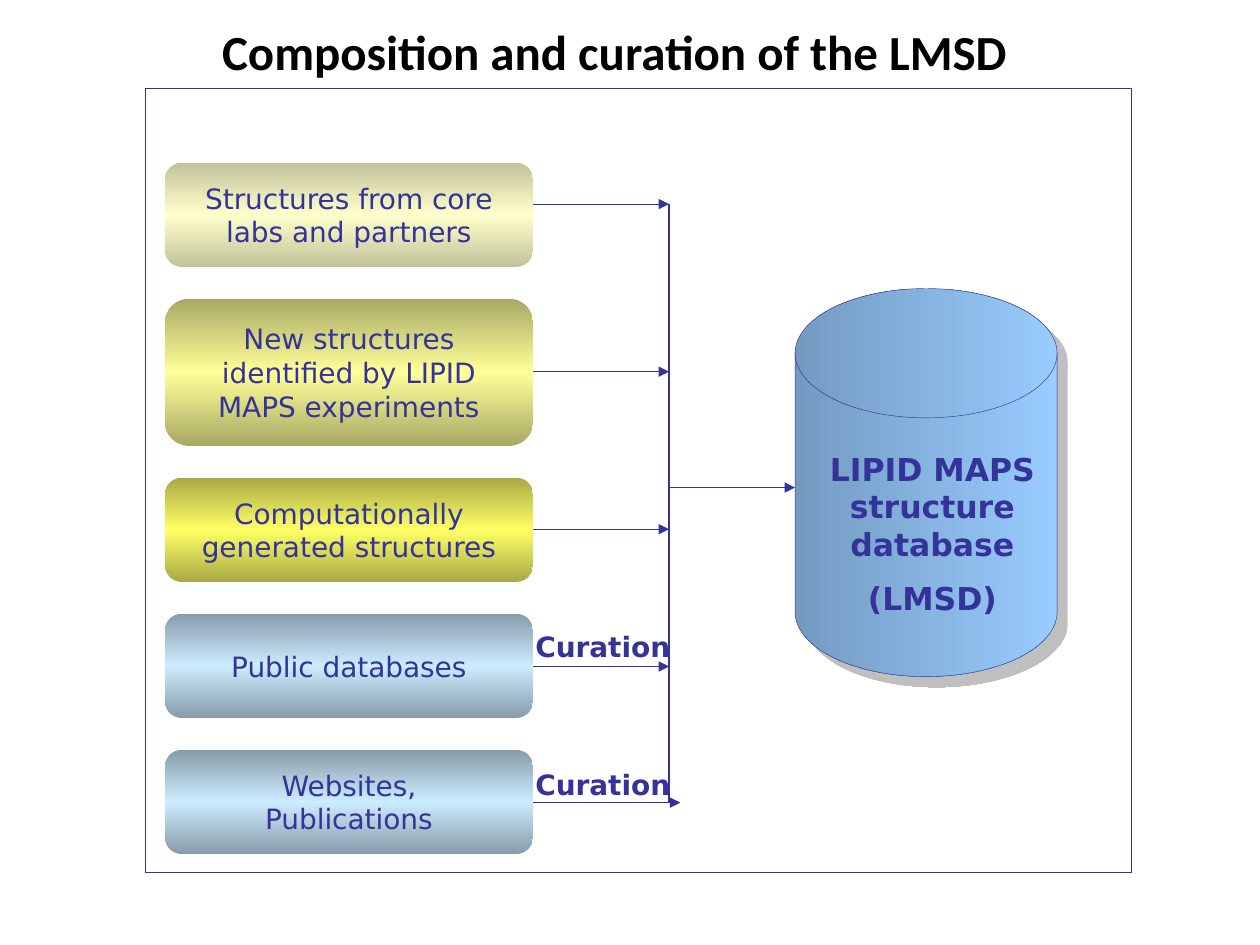
from copy import deepcopy

from lxml import etree
from pptx import Presentation
from pptx.dml.color import RGBColor
from pptx.enum.shapes import MSO_CONNECTOR, MSO_SHAPE
from pptx.enum.text import MSO_ANCHOR, PP_ALIGN
from pptx.oxml.ns import qn
from pptx.util import Inches, Pt

STRAIGHT = MSO_CONNECTOR.STRAIGHT
RECTANGLE = MSO_SHAPE.RECTANGLE
ROUNDED = MSO_SHAPE.ROUNDED_RECTANGLE
DISK = MSO_SHAPE.FLOWCHART_MAGNETIC_DISK
TOP, MIDDLE = MSO_ANCHOR.TOP, MSO_ANCHOR.MIDDLE
LEFT, CENTER = PP_ALIGN.LEFT, PP_ALIGN.CENTER

INDIGO = "333399"
BODY_FONT = "DejaVu Sans"
HAIRLINE = 0.25
TRUNK_X = 5.31
SOURCE_LEFT, SOURCE_WIDTH = 1.31, 2.92

# Top, height, edge colour, middle colour, lines of text
SOURCES = [
    (1.29, 0.83, "C2C29B", "FFFFCC", ["Structures from core labs and partners"]),
    (2.37, 1.17, "A8A865", "FFFF99",
     ["New structures identified by LIPID MAPS experiments"]),
    (3.79, 0.83, "A9A944", "FFFF66", ["Computationally generated structures"]),
    (4.87, 0.83, "879CA9", "CCECFF", ["Public databases"]),
    (5.95, 0.83, "879CA9", "CCECFF", ["Websites,", "Publications"]),
]
# Start x, end x, y
ARROWS = [
    (3.9, TRUNK_X, 1.62),
    (3.9, TRUNK_X, 2.95),
    (3.9, TRUNK_X, 4.2),
    (3.9, TRUNK_X, 5.29),
    (3.98, 5.4, 6.37),
    (TRUNK_X, 6.31, 3.87),
]
CURATION_TOPS = [4.95, 6.04]


def color(value):
    return RGBColor.from_string(value)


def write(shape, lines, size, bold=False, align=CENTER, anchor=MIDDLE,
          font=BODY_FONT, ink=INDIGO, gap=0):
    frame = shape.text_frame
    frame.word_wrap = True
    frame.vertical_anchor = anchor
    for index, line in enumerate(lines):
        para = frame.add_paragraph() if index else frame.paragraphs[0]
        para.alignment = align
        if index:
            para.space_before = Pt(gap)
        span = para.add_run()
        span.text = line
        span.font.name = font
        span.font.size = Pt(size)
        span.font.bold = bold
        span.font.color.rgb = color(ink)


def fill_gradient(shape, colors, angle):
    shape.fill.gradient()
    shape.fill.gradient_angle = angle
    stop_list = shape._element.spPr.find(qn("a:gradFill")).find(qn("a:gsLst"))
    for _ in range(len(colors) - len(stop_list)):
        stop_list.insert(1, deepcopy(stop_list[0]))
    for index, (stop, value) in enumerate(zip(shape.fill.gradient_stops, colors)):
        stop.position = index / (len(colors) - 1)
        stop.color.rgb = color(value)


def add_line(page, x1, y1, x2, y2, width, arrow=False):
    line = page.shapes.add_connector(
        STRAIGHT, Inches(x1), Inches(y1), Inches(x2), Inches(y2))
    line.line.color.rgb = color(INDIGO)
    line.line.width = Pt(width)
    if arrow:
        etree.SubElement(line.line._get_or_add_ln(), qn("a:tailEnd"), type="triangle")
    etree.SubElement(line._element.spPr, qn("a:effectLst"))


def add_title(page, left, top, width, height):
    box = page.shapes.add_textbox(
        Inches(left), Inches(top), Inches(width), Inches(height))
    box.text_frame.margin_top = 0
    write(box, ["Composition and curation of the LMSD"], 28, True,
          anchor=TOP, font="Calibri", ink="000000")


def add_curation(page, left, top, width, height):
    box = page.shapes.add_textbox(
        Inches(left), Inches(top), Inches(width), Inches(height))
    write(box, ["Curation"], 16, True, LEFT, TOP)


def add_source(page, left, top, width, height, edge, middle, lines):
    box = page.shapes.add_shape(
        ROUNDED, Inches(left), Inches(top), Inches(width), Inches(height))
    box.shadow.inherit = False
    box.line.fill.background()
    fill_gradient(box, [edge, middle, edge], 90)
    write(box, lines, 16)


def add_database(page, left, top, width, height):
    group = page.shapes.add_group_shape()
    disk = group.shapes.add_shape(
        DISK, Inches(left), Inches(top), Inches(width), Inches(height))
    fill_gradient(disk, ["749AC1", "99CCFF"], 0)
    disk.line.color.rgb = color(INDIGO)
    disk.line.width = Pt(HAIRLINE)

    # Half-transparent shadow, down and to the right
    disk.shadow.inherit = False
    effects = disk._element.spPr.find(qn("a:effectLst"))
    shadow = etree.SubElement(effects, qn("a:outerShdw"), dist=str(Pt(8.5)),
                              dir="2700000", algn="ctr", rotWithShape="0")
    tint = etree.SubElement(shadow, qn("a:srgbClr"), val="808080")
    etree.SubElement(tint, qn("a:alpha"), val="50000")

    label = group.shapes.add_textbox(
        Inches(left + 0.09), Inches(top + 1.23), Inches(2), Inches(1.46))
    write(label, ["LIPID MAPS structure database", "(LMSD)"], 18, True,
          anchor=TOP, gap=9)


def add_frame(page, left, top, width, height):
    frame = page.shapes.add_shape(
        RECTANGLE, Inches(left), Inches(top), Inches(width), Inches(height))
    frame.shadow.inherit = False
    frame.fill.background()
    frame.line.color.rgb = color(INDIGO)
    frame.line.width = Pt(HAIRLINE)


def main():
    deck = Presentation()
    deck.slide_width, deck.slide_height = Inches(10), Inches(7.5)
    page = deck.slides.add_slide(deck.slide_layouts[6])

    # Flow lines lie behind the boxes
    for start, end, y in ARROWS:
        add_line(page, start, y, end, y, HAIRLINE, arrow=True)
    add_line(page, TRUNK_X, 1.62, TRUNK_X, 6.37, 0.75)

    # Sources, their curation labels and the database
    for top, height, edge, middle, lines in SOURCES:
        add_source(page, SOURCE_LEFT, top, SOURCE_WIDTH, height, edge, middle, lines)
    for top in CURATION_TOPS:
        add_curation(page, 4.15, top, 1.42, 0.37)
    add_database(page, 6.31, 2.29, 2.08, 3.08)

    # Frame and title
    add_frame(page, 1.15, 0.7, 7.83, 6.22)
    add_title(page, 0.29, 0.17, 9.17, 0.92)
    deck.save("out.pptx")


if __name__ == "__main__":
    main()
